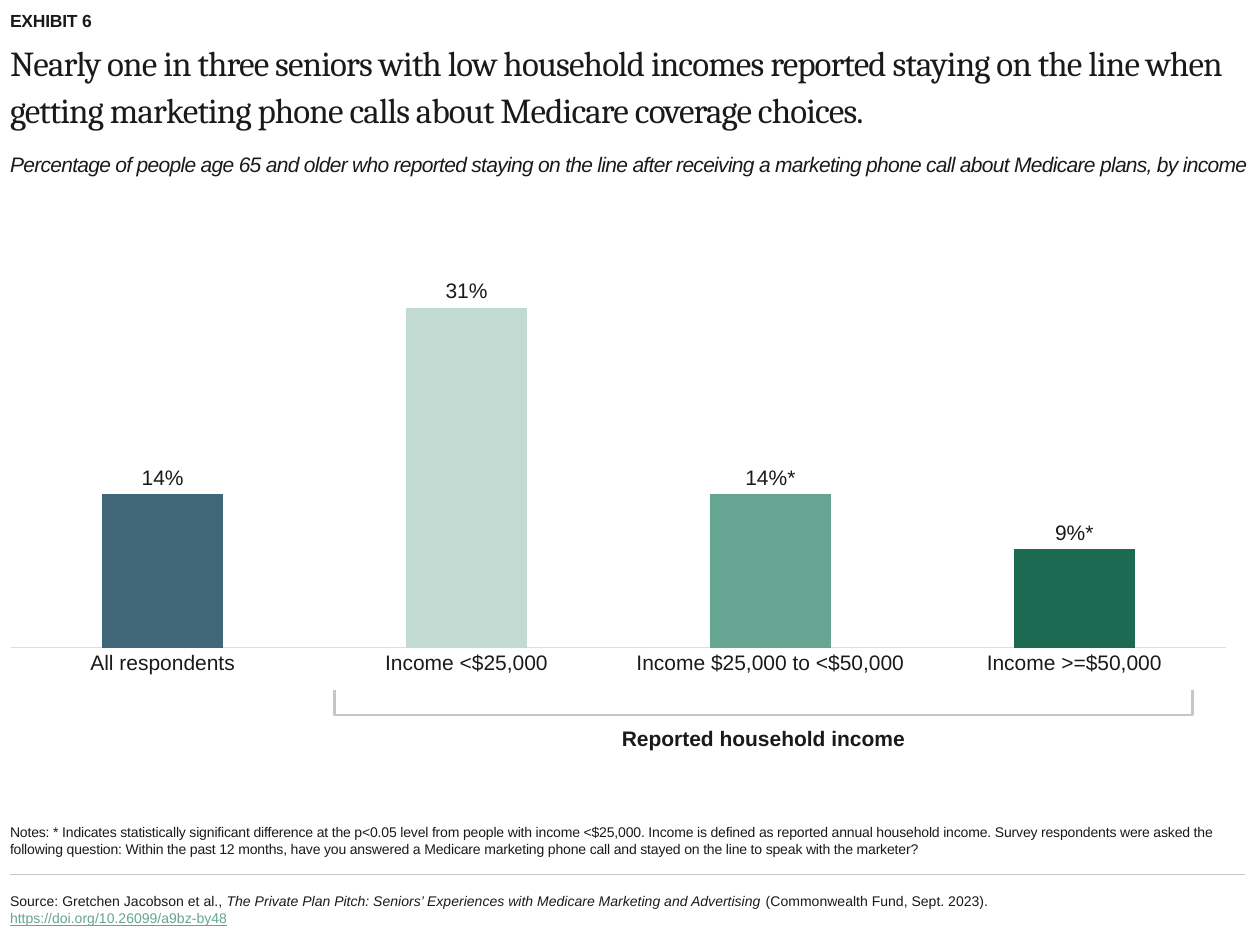
import pptx
import pptx.chart.data
import pptx.dml.color
import pptx.enum.chart
import pptx.enum.shapes
import pptx.enum.text
import pptx.oxml
import pptx.oxml.ns
import pptx.util

COLORS = {
    "text": "1A1A1A", "rule": "C6C6C6", "axis": "DDDDDD", "all": "3F6777",
    "low": "C1DBD3", "middle": "65A591", "high": "1B6A51",
}
RGB = {name: pptx.dml.color.RGBColor.from_string(value) for name, value in COLORS.items()}
ANCHOR = pptx.enum.text.MSO_ANCHOR
ALIGN = pptx.enum.text.PP_ALIGN

presentation = pptx.Presentation()
presentation.slide_width = pptx.util.Inches(10)
presentation.slide_height = pptx.util.Inches(7.5)
slide = presentation.slides.add_slide(presentation.slide_layouts[6])

# Grid: 100 columns by 75 rows
COLUMN = presentation.slide_width // 100
ROW = presentation.slide_height // 75
MARGIN = 0.8
TEXT_WIDTH = 100 - 2 * MARGIN
RULE_WIDTH = 98


def place(left, top, width, height):
    return [round(left * COLUMN), round(top * ROW), round(width * COLUMN), round(height * ROW)]


def set_font(font, size, color="text", name="Arial", bold=False, italic=False):
    font.name = name
    font.size = pptx.util.Pt(size)
    font.color.rgb = RGB[color]
    font.bold = bold
    font.italic = italic


# Text boxes: position, anchor, alignment, line spacing, letter spacing, runs
text_boxes = [
    ((MARGIN, 0.8, TEXT_WIDTH, 2), ANCHOR.TOP, ALIGN.LEFT, 1, -0.1,
     [("EXHIBIT 6", {"size": 10, "bold": True})]),
    ((MARGIN, 3, TEXT_WIDTH, 7.5), ANCHOR.TOP, ALIGN.LEFT, 1.1, -0.5,
     [("Nearly one in three seniors with low household incomes reported staying on the line "
       "when getting marketing phone calls about Medicare coverage choices.",
       {"size": 20, "name": "Cambria"})]),
    ((MARGIN, 12, TEXT_WIDTH, 2.5), ANCHOR.TOP, ALIGN.LEFT, 1, -0.4,
     [("Percentage of people age 65 and older who reported staying on the line after "
       "receiving a marketing phone call about Medicare plans, by income",
       {"size": 12, "italic": True})]),
    ((48.1, 57.6, 25, 2), ANCHOR.TOP, ALIGN.CENTER, 1, 0,
     [("Reported household income", {"size": 12, "bold": True})]),
    ((MARGIN, 62.5, TEXT_WIDTH, 5.5), ANCHOR.BOTTOM, ALIGN.LEFT, 1, -0.1,
     [("Notes: * Indicates statistically significant difference at the p<0.05 level from "
       "people with income <$25,000. Income is defined as reported annual household income. "
       "Survey respondents were asked the following question: Within the past 12 months, have "
       "you answered a Medicare marketing phone call and stayed on the line to speak with the "
       "marketer?", {"size": 8})]),
    ((MARGIN, 69.9, 78, 4.6), ANCHOR.MIDDLE, ALIGN.LEFT, 1, 0,
     [("Source: Gretchen Jacobson et al., ", {"size": 8}),
      ("The Private Plan Pitch: Seniors’ Experiences with Medicare Marketing and Advertising",
       {"size": 8, "italic": True}),
      (" (Commonwealth Fund, Sept. 2023). ", {"size": 8}),
      ("https://doi.org/10.26099/a9bz-by48", {"size": 8, "color": "middle"})]),
]
for position, anchor, alignment, line_spacing, letter_spacing, runs in text_boxes:
    frame = slide.shapes.add_textbox(*place(*position)).text_frame
    frame.word_wrap = True
    frame.vertical_anchor = anchor
    frame.margin_left = frame.margin_top = frame.margin_right = frame.margin_bottom = 0
    paragraph = frame.paragraphs[0]
    paragraph.alignment = alignment
    paragraph.line_spacing = line_spacing
    for text, style in runs:
        run = paragraph.add_run()
        run.text = text
        set_font(run.font, **style)
        run.font.underline = text.startswith("https")
        if letter_spacing:
            run._r.get_or_add_rPr().set("spc", str(round(letter_spacing * 100)))

# Column chart: category, value, color, label that replaces the value
bars = [
    ("All respondents", 0.14, "all", None),
    ("Income <$25,000", 0.31, "low", None),
    ("Income $25,000 to <$50,000", 0.14, "middle", "14%*"),
    ("Income >=$50,000", 0.09, "high", "9%*"),
]
chart_data = pptx.chart.data.CategoryChartData(number_format="0%")
chart_data.categories = [bar[0] for bar in bars]
chart_data.add_series("Series 1", [bar[1] for bar in bars])
chart = slide.shapes.add_chart(
    pptx.enum.chart.XL_CHART_TYPE.COLUMN_CLUSTERED,
    *place(MARGIN, 14.7, RULE_WIDTH, 41.3), chart_data).chart
chart.has_legend = False
chart.has_title = False
set_font(chart.font, 10)

category_axis = chart.category_axis
category_axis.major_tick_mark = pptx.enum.chart.XL_TICK_MARK.NONE
category_axis.format.line.color.rgb = RGB["axis"]
category_axis.format.line.width = pptx.util.Pt(0.75)
set_font(category_axis.tick_labels.font, 12)

value_axis = chart.value_axis
value_axis.minimum_scale = 0
value_axis.maximum_scale = 0.4
value_axis.major_unit = 0.1
value_axis.has_major_gridlines = False
value_axis.visible = False

plot = chart.plots[0]
plot.gap_width = 150
plot.vary_by_categories = False
series = plot.series[0]
series.format.fill.solid()
series.format.fill.fore_color.rgb = RGB["all"]
labels = series.data_labels
labels.show_value = True
labels.number_format = "0%"
labels.number_format_is_linked = False
labels.position = pptx.enum.chart.XL_LABEL_POSITION.OUTSIDE_END
set_font(labels.font, 12)
for index, (category, value, color, label) in enumerate(bars):
    point = series.points[index]
    point.format.fill.solid()
    point.format.fill.fore_color.rgb = RGB[color]
    if label:
        run = point.data_label.text_frame.paragraphs[0].add_run()
        run.text = label
        set_font(run.font, 12)
        point.data_label.position = pptx.enum.chart.XL_LABEL_POSITION.OUTSIDE_END

# Fixed inner plot area, in shares of the chart
plot_area = chart._chartSpace.chart.plotArea
for layout in plot_area.findall(pptx.oxml.ns.qn("c:layout")):
    plot_area.remove(layout)
plot_area.insert(0, pptx.oxml.parse_xml(
    f'<c:layout {pptx.oxml.ns.nsdecls("c")}><c:manualLayout><c:layoutTarget val="inner"/>'
    '<c:xMode val="edge"/><c:yMode val="edge"/><c:x val="0"/><c:y val="0.046"/>'
    '<c:w val="0.985"/><c:h val="0.843"/></c:manualLayout></c:layout>'))

# Bracket under the three income groups
bracket = slide.shapes.add_shape(
    pptx.enum.shapes.MSO_SHAPE.LEFT_BRACKET, *place(59.6, 21.7, 2, 68.1))
bracket.rotation = 270
bracket.adjustments[0] = 0
bracket.shadow.inherit = False
bracket.fill.background()
bracket.line.color.rgb = RGB["rule"]
bracket.line.width = pptx.util.Pt(1.5)

# Rule above the source
left, top, width, height = place(MARGIN, 69.4, RULE_WIDTH, 0)
rule = slide.shapes.add_connector(
    pptx.enum.shapes.MSO_CONNECTOR.STRAIGHT, left, top, left + width, top)
rule.line.color.rgb = RGB["rule"]
rule.line.width = pptx.util.Pt(0.75)
rule._element.spPr.append(
    pptx.oxml.parse_xml(f'<a:effectLst {pptx.oxml.ns.nsdecls("a")}/>'))

presentation.save("out.pptx")
